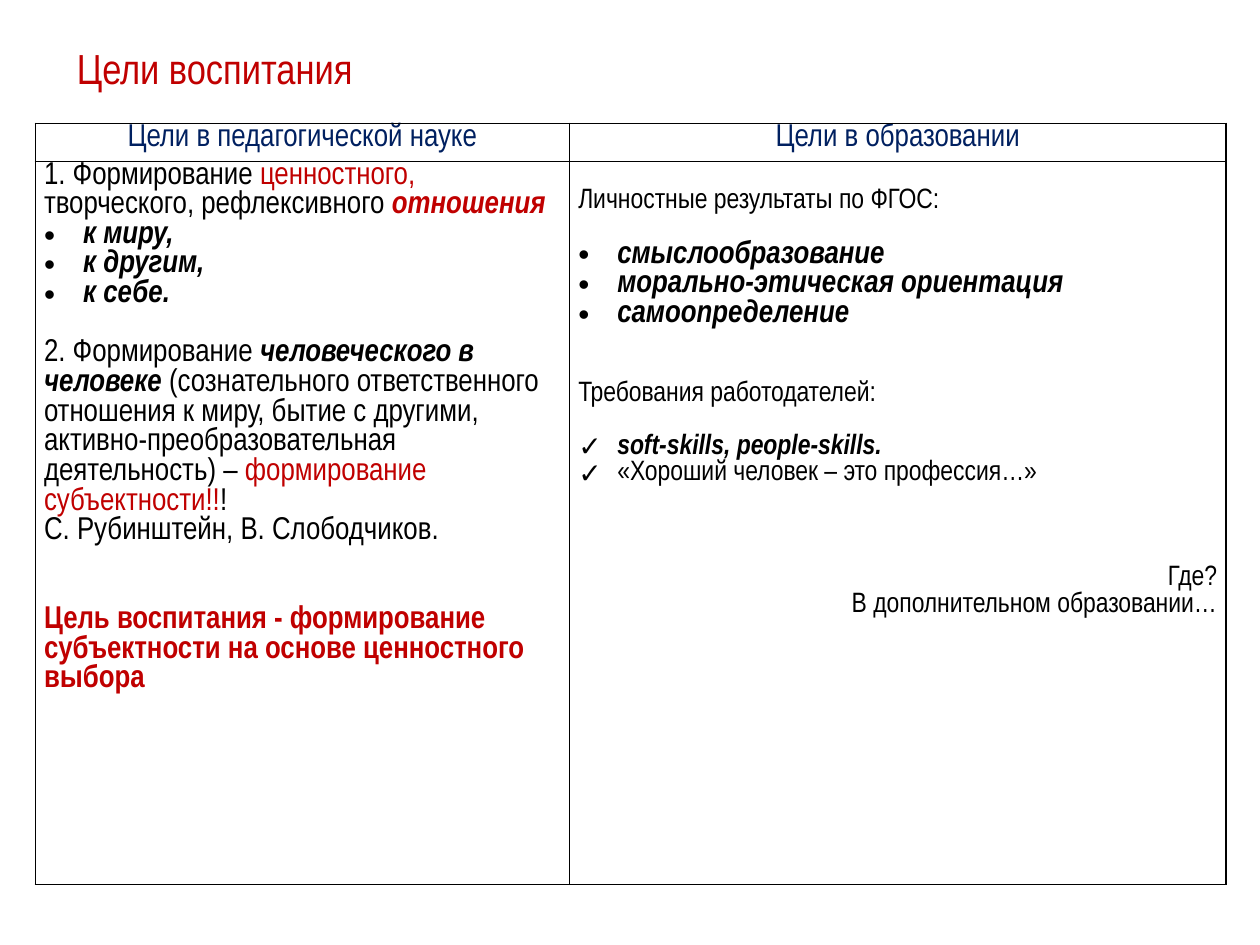
from lxml import etree
from pptx import Presentation
from pptx.dml.color import RGBColor
from pptx.enum.text import MSO_ANCHOR, MSO_AUTO_SIZE, PP_ALIGN
from pptx.oxml.ns import qn
from pptx.util import Inches, Pt

LEFT, MID, RIGHT = PP_ALIGN.LEFT, PP_ALIGN.CENTER, PP_ALIGN.RIGHT
TOP = MSO_ANCHOR.TOP
FIXED = MSO_AUTO_SIZE.NONE
RED = RGBColor(0xC0, 0x00, 0x00)
NAVY = RGBColor(0x00, 0x20, 0x60)
BLACK = RGBColor(0x00, 0x00, 0x00)
FACE = "Arial Narrow"


def style(para, size, color, align=LEFT, strong=False, slant=False):
    para.alignment = align
    font = para.font
    font.name, font.size = FACE, Pt(size)
    font.bold, font.italic = strong, slant
    font.color.rgb = color


def fill_cell(cell, rows):
    frame = cell.text_frame
    for i, (runs, size, color, align, mark, gap, strong, slant) in enumerate(rows):
        para = frame.paragraphs[0] if i == 0 else frame.add_paragraph()
        para.space_before = Pt(gap)
        if mark:
            props = para._p.get_or_add_pPr()
            props.set("marL", str(Inches(0.31)))
            props.set("indent", str(-Inches(0.31)))
            etree.SubElement(props, qn("a:buFont")).set("typeface", "Arial")
            etree.SubElement(props, qn("a:buChar")).set("char", mark)
        style(para, size, color, align, strong, slant)
        for text, tint, heavy in runs:
            run = para.add_run()
            run.text = text
            if tint:
                run.font.color.rgb = tint
            if heavy:
                run.font.bold = run.font.italic = True


prs = Presentation()
prs.slide_width, prs.slide_height = Inches(10), Inches(7.5)
slide = prs.slides.add_slide(prs.slide_layouts[5])

title = slide.shapes.title
title.left, title.top = Inches(0.51), Inches(0.29)
title.width, title.height = Inches(8.98), Inches(0.6)
frame = title.text_frame
frame.auto_size = FIXED
frame.vertical_anchor = TOP
frame.text = "Цели воспитания"
style(frame.paragraphs[0], 24, RED)

heads = ["Цели в педагогической науке", "Цели в образовании"]
aims = [
    ([("1. Формирование ", None, False), ("ценностного,", RED, False),
      (" творческого, рефлексивного ", None, False), ("отношения", RED, True)],
     18, BLACK, LEFT, None, 0, False, False),
    *[([(text, None, False)], 18, BLACK, LEFT, "•", 0, True, True)
      for text in ("к миру,", "к другим,", "к себе.")],
    ([("2. Формирование ", None, False), ("человеческого в человеке ", None, True),
      ("(сознательного ответственного отношения к миру, бытие с другими, "
       "активно-преобразовательная деятельность) – ", None, False),
      ("формирование субъектности!!", RED, False), ("!", None, False)],
     18, BLACK, LEFT, None, 17, False, False),
    ([("С. Рубинштейн, В. Слободчиков.", None, False)],
     18, BLACK, LEFT, None, 0, False, False),
    ([("Цель воспитания - формирование субъектности на основе ценностного выбора",
       None, False)], 18, RED, LEFT, None, 34, True, False),
]
needs = [
    ([(text, None, False)], size, BLACK, align, mark, gap, heavy, heavy)
    for text, size, align, mark, gap, heavy in [
        ("Личностные результаты по ФГОС:", 16, LEFT, None, 0, False),
        ("смыслообразование", 18, LEFT, "•", 15, True),
        ("морально-этическая ориентация", 18, LEFT, "•", 0, True),
        ("самоопределение", 18, LEFT, "•", 0, True),
        ("Требования работодателей:", 16, LEFT, None, 30, False),
        ("soft-skills, people-skills.", 16, LEFT, "✓", 15, True),
        ("«Хороший человек – это профессия…»", 16, LEFT, "✓", 0, False),
        ("Где?", 16, RIGHT, None, 45, False),
        ("В дополнительном образовании…", 16, RIGHT, None, 0, False),
    ]
]

table = slide.shapes.add_table(
    2, 2, Inches(0.28), Inches(0.98), Inches(9.45), Inches(6.04)).table
table.first_row = table.horz_banding = False
for col, width in zip(table.columns, (4.24, 5.21)):
    col.width = Inches(width)
for row, height in zip(table.rows, (0.3, 5.74)):
    row.height = Inches(height)

for cell in table.iter_cells():
    cell.margin_left = cell.margin_right = Inches(0.07)
    cell.margin_top = cell.margin_bottom = 0
    props = cell._tc.get_or_add_tcPr()
    for side in ("lnL", "lnR", "lnT", "lnB"):
        line = etree.SubElement(props, qn("a:" + side), w=str(Pt(1)))
        solid = etree.SubElement(line, qn("a:solidFill"))
        etree.SubElement(solid, qn("a:srgbClr"), val=str(BLACK))
    cell.fill.background()

for i, (head, body) in enumerate(zip(heads, (aims, needs))):
    fill_cell(table.cell(0, i),
              [([(head, None, False)], 18, NAVY, MID, None, 0, False, False)])
    fill_cell(table.cell(1, i), body)
table.cell(1, 1).margin_top = Inches(0.21)

prs.save("out.pptx")
